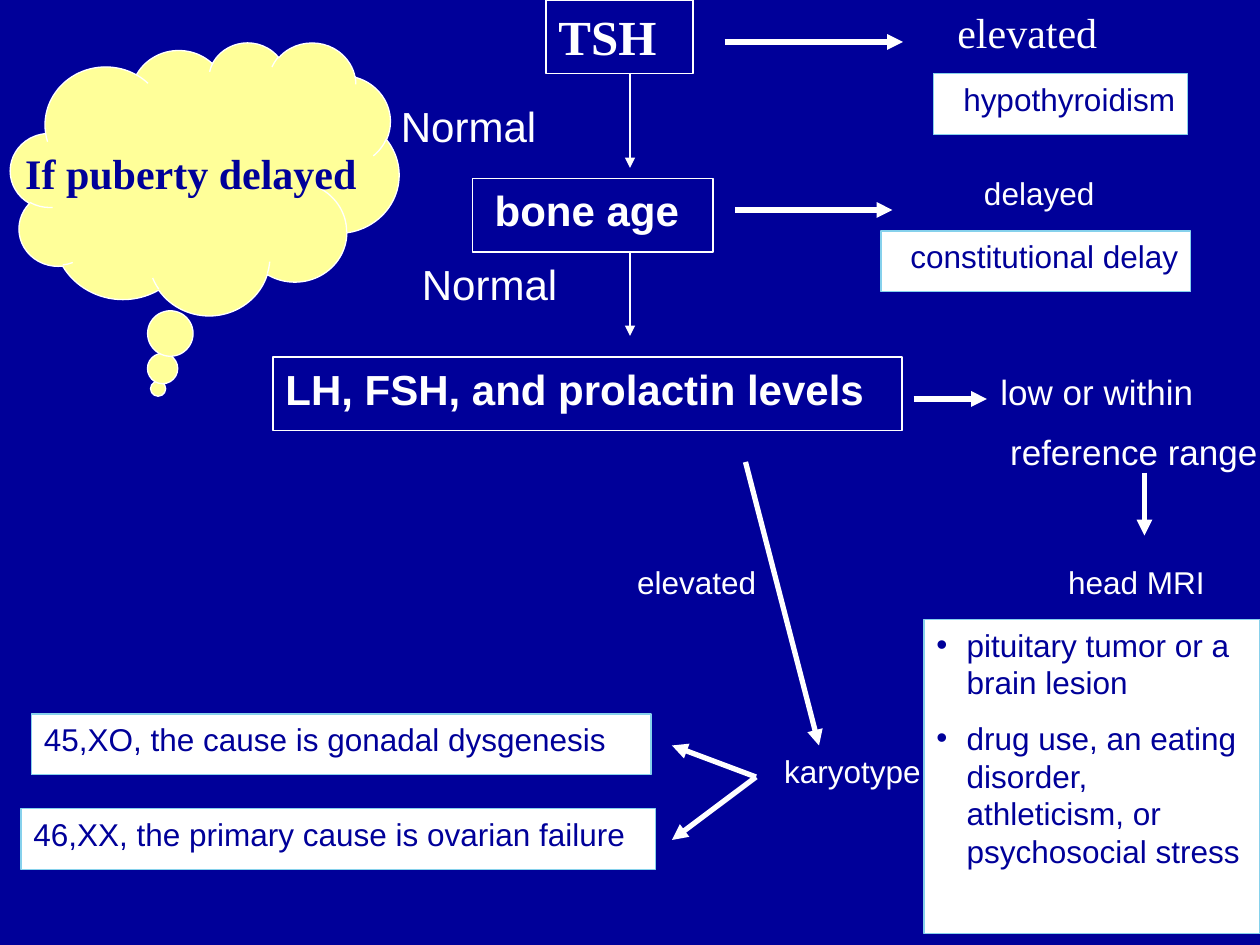
from lxml.etree import SubElement
from pptx import Presentation
from pptx.dml.color import RGBColor
from pptx.enum.shapes import MSO_CONNECTOR as Connector, MSO_SHAPE as Shape
from pptx.enum.text import MSO_ANCHOR as Anchor, PP_ALIGN as Align
from pptx.oxml.ns import qn
from pptx.util import Inches, Pt

CELL = Inches(1) / 12  # the slide is a grid of 120 columns by 90 rows
NAVY, WHITE, AQUA, YELLOW = "000099", "FFFFFF", "86D1EC", "FFFF99"
SANS, SERIF = "Arial", "Times New Roman"
LEFT, CENTER, RIGHT = Align.LEFT, Align.CENTER, Align.RIGHT


def cells(*counts):
    return [round(count * CELL) for count in counts]


def color(hex_value):
    return RGBColor.from_string(hex_value)


def apply(target, values):
    for name, value in values.items():
        setattr(target, name, value)


def add_bullet(para):
    properties = para._p.get_or_add_pPr()
    indent = Inches(0.24)
    properties.set("marL", str(indent))
    properties.set("indent", str(-indent))
    SubElement(properties, qn("a:buFont"), typeface=SANS)
    SubElement(properties, qn("a:buChar"), char="•")


def write(box, lines, size, ink, align=LEFT, name=SANS, bold=False,
          bullets=False, wrap=True, anchor=Anchor.TOP):
    frame = box.text_frame
    apply(frame, {"word_wrap": wrap, "vertical_anchor": anchor})
    for index, line in enumerate(lines):
        para = frame.add_paragraph() if index else frame.paragraphs[0]
        spacing = {"alignment": align, "space_after": Pt(5 if index < len(lines) - 1 else 0)}
        if index:
            spacing["space_before"] = Pt(5)
        apply(para, spacing)
        if bullets:
            add_bullet(para)
        span = para.add_run()
        span.text = line
        apply(span.font, {"size": Pt(size), "name": name, "bold": bold})
        span.font.color.rgb = color(ink)


def add_label(page, place, lines, size, **style):
    box = page.shapes.add_textbox(*cells(*place))
    write(box, lines, size, WHITE, **style)


def add_box(page, place, lines, size, ink, fill=None, line=WHITE,
            kind=Shape.RECTANGLE, **style):
    box = page.shapes.add_shape(kind, *cells(*place))
    box.shadow.inherit = False
    if fill:
        box.fill.solid()
        box.fill.fore_color.rgb = color(fill)
    else:
        box.fill.background()
    box.line.color.rgb = color(line)
    box.line.width = Pt(0.75)
    write(box, lines, size, ink, **style)
    return box


def add_step(page, place, text, size, **style):
    add_box(page, place, [text], size, WHITE, bold=True, **style)


def add_finding(page, place, lines, **style):
    add_box(page, place, lines, 18, NAVY, fill=WHITE, line=AQUA, **style)


def add_arrow(page, ends, width=3):
    arrow = page.shapes.add_connector(Connector.STRAIGHT, *cells(*ends))
    arrow.line.color.rgb = color(WHITE)
    arrow.line.width = Pt(width)
    SubElement(arrow.line._get_or_add_ln(), qn("a:tailEnd"), type="triangle")
    SubElement(arrow._element.spPr, qn("a:effectLst"))


def main():
    deck = Presentation()
    apply(deck, {"slide_width": Inches(10), "slide_height": Inches(7.5)})
    page = deck.slides.add_slide(deck.slide_layouts[6])
    page.background.fill.solid()
    page.background.fill.fore_color.rgb = color(NAVY)

    # Tests, from top to bottom
    add_step(page, (52, 0, 14, 7), "TSH", 28, name=SERIF)
    add_step(page, (45, 17, 22.9, 7), "bone age ", 24, align=CENTER)
    add_step(page, (26, 34, 59.9, 7), "LH, FSH, and prolactin levels", 24)

    # Results that lead from one test to the next
    add_label(page, (90, 0, 17, 6), ["elevated"], 24, name=SERIF)
    add_label(page, (37, 9, 17, 6), ["Normal"], 24)
    add_label(page, (39, 24, 18, 6.8), ["Normal"], 24)
    add_label(page, (94.1, 34.7, 28.6, 11.8), ["low or within", " reference range"], 20)
    for left, top, width, text in [(91, 16, 14.4, "delayed"), (58, 53, 15.2, "elevated"),
                                   (99, 53, 16.9, "head MRI")]:
        add_label(page, (left, top, width, 5.6), [text], 18, align=RIGHT)
    add_label(page, (72.7, 71, 17.8, 5.6), ["karyotype."], 18, align=CENTER)

    # Arrows: thin down the main path, thick to the branches
    for top, bottom in [(7, 16), (24, 32)]:
        add_arrow(page, (60, top, 60, bottom), width=0.75)
    for ends in [(69, 4, 86, 4), (70, 20, 85, 20), (87, 38, 94, 38), (109, 45, 109, 51),
                 (71, 44, 78, 71), (72, 74, 64, 71), (72, 74, 64, 80)]:
        add_arrow(page, ends)

    # Diagnoses
    for left, top, width, text, align in [
            (88.9, 7, 24.2, "hypothyroidism", RIGHT),
            (83.9, 22, 29.5, "constitutional delay", RIGHT),
            (3, 68, 59, "45,XO, the cause is gonadal dysgenesis", LEFT),
            (2, 77, 60.4, "46,XX, the primary cause is ovarian failure", LEFT)]:
        add_finding(page, (left, top, width, 5.8), [text], align=align)
    add_finding(page, (88, 59, 32, 29.9),
                ["pituitary tumor or a brain lesion",
                 "drug use, an eating disorder, athleticism, or psychosocial stress"],
                bullets=True)

    # Starting question
    cloud = add_box(page, (1, 4, 37, 26), ["If puberty delayed"], 24, NAVY, fill=YELLOW,
                    kind=Shape.CLOUD_CALLOUT, align=CENTER, name=SERIF, bold=True,
                    wrap=False, anchor=Anchor.MIDDLE)
    cloud.adjustments[0], cloud.adjustments[1] = -0.12, 0.77

    deck.save("out.pptx")


if __name__ == "__main__":
    main()
